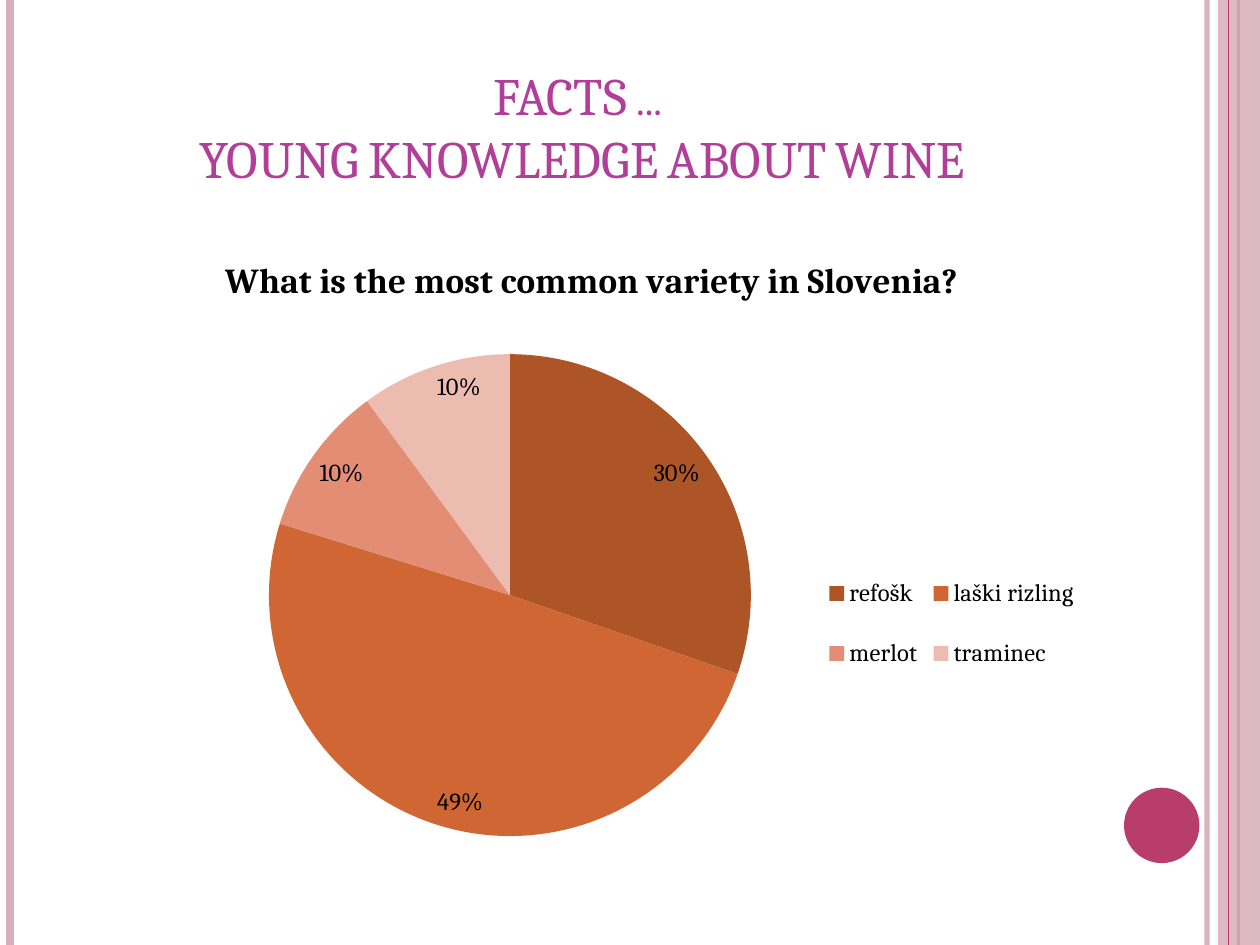
from lxml import etree
from pptx import Presentation
from pptx.chart.data import CategoryChartData
from pptx.dml.color import RGBColor
from pptx.enum.chart import XL_CHART_TYPE, XL_LABEL_POSITION, XL_LEGEND_POSITION
from pptx.enum.shapes import MSO_CONNECTOR, MSO_SHAPE
from pptx.enum.text import MSO_ANCHOR, PP_ALIGN
from pptx.oxml.ns import qn
from pptx.util import Cm, Pt

PIE = XL_CHART_TYPE.PIE
INSIDE_END = XL_LABEL_POSITION.INSIDE_END
LEGEND_RIGHT = XL_LEGEND_POSITION.RIGHT
STRAIGHT = MSO_CONNECTOR.STRAIGHT
RECTANGLE, OVAL = MSO_SHAPE.RECTANGLE, MSO_SHAPE.OVAL
BOTTOM, CENTER = MSO_ANCHOR.BOTTOM, PP_ALIGN.CENTER

FONT = "Cambria"
WIDTH, HEIGHT = 25.4, 19.05
COLORS = {
    "pale": "D8AFB9", "accent": "B83D68", "title": "B13F9A", "text": "000000",
    "refošk": "AE5528", "laški rizling": "CF6633",
    "merlot": "E38D74", "traminec": "ECBCB1",
}
SHARES = {"refošk": 30, "laški rizling": 49, "merlot": 10, "traminec": 10}


def color(name):
    return RGBColor.from_string(COLORS[name])


def set_opacity(shape, percent):
    paint = shape._element.find(".//" + qn("a:srgbClr"))
    etree.SubElement(paint, qn("a:alpha"), val=str(percent * 1000))


def add_stripe(slide, x, name, weight, opacity=100):
    """Draw a full-height vertical line."""
    line = slide.shapes.add_connector(STRAIGHT, Cm(x), 0, Cm(x), Cm(HEIGHT))
    line.line.color.rgb = color(name)
    line.line.width = Pt(weight)
    etree.SubElement(line._element.spPr, qn("a:effectLst"))
    if opacity < 100:
        set_opacity(line, opacity)


def add_block(slide, kind, left, top, width, height, name):
    shape = slide.shapes.add_shape(kind, Cm(left), Cm(top), Cm(width), Cm(height))
    shape.shadow.inherit = False
    shape.fill.solid()
    shape.fill.fore_color.rgb = color(name)
    shape.line.fill.background()
    return shape


def style_font(font, size, name="text", bold=False):
    font.name = FONT
    font.size = Pt(size)
    font.bold = bold
    font.color.rgb = color(name)


def add_title(slide, lines):
    box = slide.shapes.add_textbox(Cm(1.27), Cm(0.76), Cm(20.75), Cm(3.18))
    frame = box.text_frame
    frame.word_wrap = True
    frame.vertical_anchor = BOTTOM
    paragraph = frame.paragraphs[0]
    paragraph.alignment = CENTER
    for index, line in enumerate(lines):
        if index:
            paragraph.add_line_break()
        run = paragraph.add_run()
        run.text = line
        style_font(run.font, 30, "title")
        run.font._element.set("cap", "small")


def place(element, x, y, width=None, height=None, inner=False):
    """Give a chart part a fixed place, in fractions of the chart."""
    layout = element.find(qn("c:layout"))
    if layout is None:
        layout = etree.Element(qn("c:layout"))
        before = [qn("c:tx"), qn("c:legendPos"), qn("c:legendEntry")]
        position = sum(child.tag in before for child in element)
        element.insert(position, layout)
    manual = etree.SubElement(layout, qn("c:manualLayout"))
    values = {"xMode": "edge", "yMode": "edge", "x": x, "y": y, "w": width, "h": height}
    if inner:
        values = {"layoutTarget": "inner", **values}
    for tag, value in values.items():
        if value is not None:
            etree.SubElement(manual, qn("c:" + tag), val=str(value))


def add_pie(slide, title, shares):
    data = CategoryChartData()
    data.categories = list(shares)
    data.add_series("Series 1", list(shares.values()))
    chart = slide.shapes.add_chart(
        PIE, Cm(1.78), Cm(4.57), Cm(20.24), Cm(12.7), data).chart
    style_font(chart.font, 10)

    # Heading
    run = chart.chart_title.text_frame.paragraphs[0].add_run()
    run.text = title
    style_font(run.font, 20, bold=True)
    place(chart.chart_title._element, 0.13, 0.04)

    # Slices
    plot = chart.plots[0]
    plot.vary_by_categories = True
    for index, name in enumerate(shares):
        fill = plot.series[0].points[index].format.fill
        fill.solid()
        fill.fore_color.rgb = color(name)
    plot_area = chart._chartSpace.find(".//" + qn("c:plotArea"))
    place(plot_area, 0.18, 0.2, 0.48, 0.77, inner=True)

    # Percent labels
    plot.has_data_labels = True
    labels = plot.data_labels
    labels.show_percentage = True
    labels.show_value = False
    labels.number_format = "0%"
    labels.number_format_is_linked = False
    labels.position = INSIDE_END
    style_font(labels.font, 14)

    # Legend
    chart.has_legend = True
    legend = chart.legend
    legend.position = LEGEND_RIGHT
    legend.include_in_layout = False
    style_font(legend.font, 14)
    place(legend._element, 0.73, 0.51, 0.26, 0.24)


def main():
    presentation = Presentation()
    presentation.slide_width, presentation.slide_height = Cm(WIDTH), Cm(HEIGHT)
    slide = presentation.slides.add_slide(presentation.slide_layouts[6])

    # Side decoration
    add_stripe(slide, 24.33, "pale", 3, opacity=93)
    add_stripe(slide, 0.21, "pale", 4.5)
    add_stripe(slide, 24.97, "accent", 1.5)
    band = add_block(slide, RECTANGLE, 24.55, 0, 0.85, HEIGHT, "pale")
    set_opacity(band, 87)
    add_stripe(slide, 24.76, "accent", 0.75)
    add_block(slide, OVAL, 22.66, 15.88, 1.52, 1.52, "accent")

    # Content
    add_pie(slide, "What is the most common variety in Slovenia?", SHARES)
    add_title(slide, ["FACTS ...", " YOUNG KNOWLEDGE ABOUT WINE"])

    presentation.save("out.pptx")


if __name__ == "__main__":
    main()
